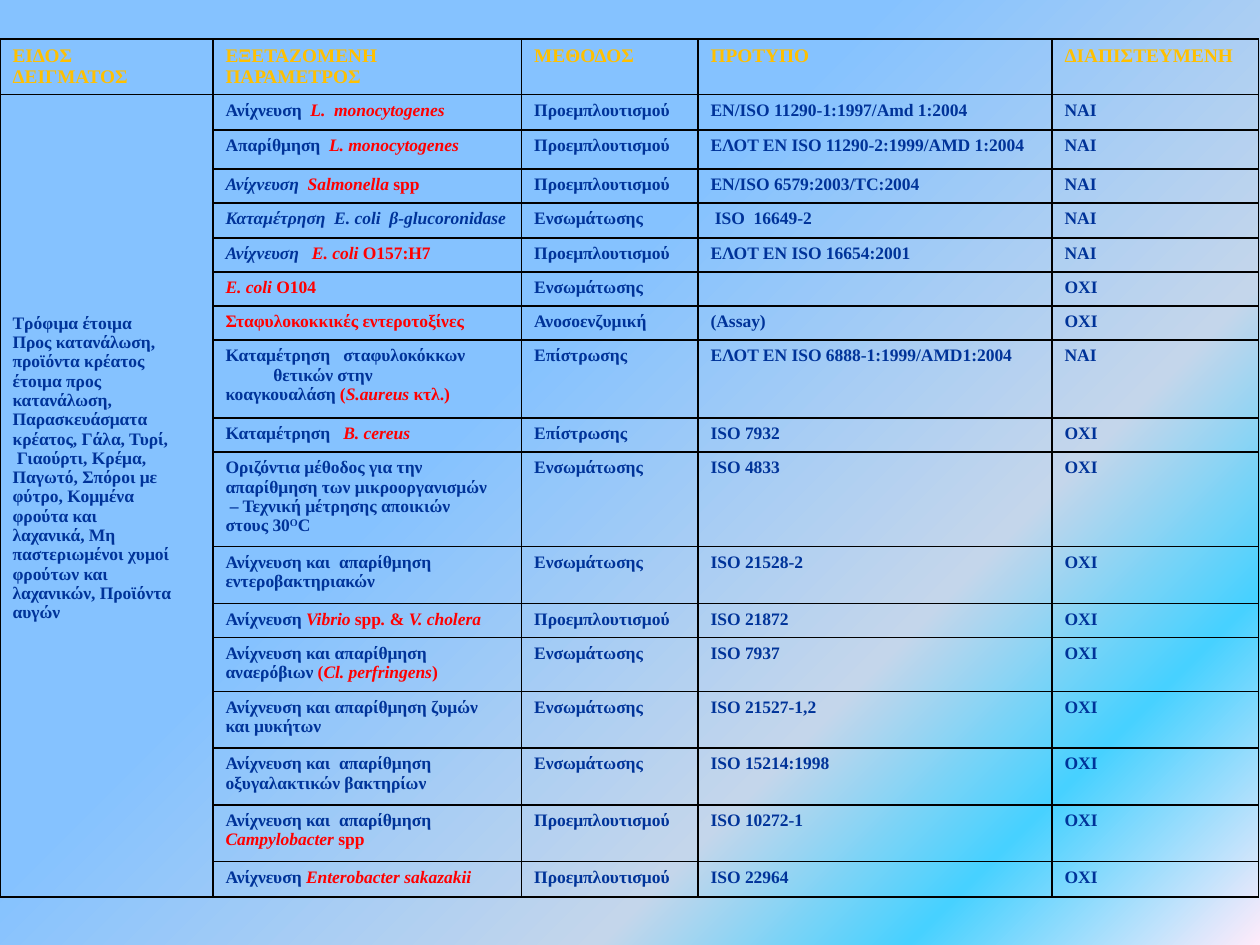
from collections import namedtuple
from functools import partial

from lxml.etree import SubElement
from pptx import Presentation
from pptx.dml.color import RGBColor
from pptx.oxml.ns import qn
from pptx.util import Inches, Pt

COLORS = {"header": "FFC000", "body": "003399", "germ": "FF0000", "border": "000000"}
SKY = [(40, "85C2FF"), (70, "C4D6EB"), (84, "47D1FF"), (100, "FFEBFA")]

Run = namedtuple("Run", "text color italic raised", defaults=("body", False, False))
italic = partial(Run, italic=True)
red = partial(Run, color="germ")
germ = partial(Run, color="germ", italic=True)

ENRICHMENT, POUR, SPREAD = "Προεμπλουτισμού", "Ενσωμάτωσης", "Επίστρωσης"
YES, NO = "ΝΑΙ", "ΟΧΙ"
DETECT = "Ανίχνευση και  απαρίθμηση"

HEADERS = [
    ["ΕΙΔΟΣ", "ΔΕΙΓΜΑΤΟΣ"],
    ["ΕΞΕΤΑΖΟΜΕΝΗ", "ΠΑΡΑΜΕΤΡΟΣ"],
    ["ΜΕΘΟΔΟΣ"],
    ["ΠΡΟΤΥΠΟ"],
    ["ΔΙΑΠΙΣΤΕΥΜΕΝΗ"],
]

SAMPLES = [
    "Τρόφιμα έτοιμα", "Προς κατανάλωση,", "προϊόντα κρέατος", "έτοιμα προς",
    "κατανάλωση,", "Παρασκευάσματα", "κρέατος, Γάλα, Τυρί,", " Γιαούρτι, Κρέμα,",
    "Παγωτό, Σπόροι με", "φύτρο, Κομμένα", "φρούτα και", "λαχανικά, Μη",
    "παστεριωμένοι χυμοί", "φρούτων και", "λαχανικών, Προϊόντα", "αυγών",
]

TESTS = [
    (0.28, [[Run("Ανίχνευση  "), germ("L.  monocytogenes")]],
     ENRICHMENT, "EN/ISO 11290-1:1997/Amd 1:2004", YES),
    (0.31, [[Run("Απαρίθμηση  "), germ("L. monocytogenes")]],
     ENRICHMENT, "ΕΛΟΤ ΕΝ ISO 11290-2:1999/AMD 1:2004", YES),
    (0.27, [[italic("Ανίχνευση  "), germ("Salmonella "), red("spp")]],
     ENRICHMENT, "EN/ISO 6579:2003/TC:2004", YES),
    (0.28, [[italic("Καταμέτρηση  E. coli  β-glucoronidase")]],
     POUR, " ISO  16649-2", YES),
    (0.27, [[italic("Ανίχνευση "), germ("  Ε. coli"), red(" O157:H7")]],
     ENRICHMENT, "ΕΛΟΤ ΕΝ ISO 16654:2001", YES),
    (0.27, [[germ("Ε. coli"), red(" O104")]], POUR, "", NO),
    (0.27, [[red("Σταφυλοκοκκικές εντεροτοξίνες")]], "Ανοσοενζυμική", "(Assay)", NO),
    (0.62, [["Καταμέτρηση   σταφυλοκόκκων θετικών στην"],
            [Run("κοαγκουαλάση "), red("("), germ("S.aureus"), red(" κτλ.)")]],
     SPREAD, "ΕΛΟΤ ΕΝ ISO 6888-1:1999/AMD1:2004", YES),
    (0.27, [[Run("Καταμέτρηση   "), germ("B. cereus")]], SPREAD, "ISO 7932", NO),
    (0.75, [["Οριζόντια μέθοδος για την"], ["απαρίθμηση των μικροοργανισμών"],
            [" – Τεχνική μέτρησης αποικιών"],
            [Run("στους 30"), Run("O", raised=True), Run("C")]],
     POUR, "ISO 4833", NO),
    (0.45, [[DETECT], ["εντεροβακτηριακών"]], POUR, "ISO 21528-2", NO),
    (0.27, [[Run("Ανίχνευση "), germ("Vibrio "), red("spp"), germ("."), red(" & "),
             germ("V. cholera")]],
     ENRICHMENT, "ISO 21872", NO),
    (0.43, [["Ανίχνευση και απαρίθμηση"],
            [Run("αναερόβιων "), red("("), germ("Cl. perfringens"), red(")")]],
     POUR, "ISO 7937", NO),
    (0.45, [["Ανίχνευση και απαρίθμηση ζυμών"], ["και μυκήτων"]],
     POUR, "ISO 21527-1,2", NO),
    (0.45, [[DETECT], ["οξυγαλακτικών βακτηρίων"]], POUR, "ISO 15214:1998", NO),
    (0.45, [[DETECT], [germ("Campylobacter "), red("spp")]],
     ENRICHMENT, "ISO 10272-1", NO),
    (0.28, [[Run("Ανίχνευση "), germ("Enterobacter sakazakii")]],
     ENRICHMENT, "ISO 22964", NO),
]


class SlideBuilder:
    font = "Times New Roman"
    hanging = Inches(0.38)

    def __init__(self, slide):
        self.slide = slide

    def background(self, stops, angle):
        self.slide.background.fill.gradient()
        gradient = self.slide._element.find(".//" + qn("a:gradFill"))
        stop_list = gradient.find(qn("a:gsLst"))
        for old_stop in list(stop_list):
            stop_list.remove(old_stop)
        for position, color in stops:
            stop = SubElement(stop_list, qn("a:gs"), pos=str(position * 1000))
            SubElement(stop, qn("a:srgbClr"), val=color)
        gradient.find(qn("a:lin")).set("ang", str(angle * 60000))

    def table(self, left, top, widths, heights):
        frame = self.slide.shapes.add_table(
            len(heights), len(widths), Inches(left), Inches(top),
            Inches(sum(widths)), Inches(sum(heights)))
        table = frame.table
        table.first_row = table.horz_banding = False
        for column, width in zip(table.columns, widths):
            column.width = Inches(width)
        for row, height in zip(table.rows, heights):
            row.height = Inches(height)
        for cell in table.iter_cells():
            self.borders(cell)
            cell.fill.background()
        return table

    def borders(self, cell):
        properties = cell._tc.get_or_add_tcPr()
        for side in ("lnL", "lnR", "lnT", "lnB"):
            line = SubElement(properties, qn("a:" + side), w=str(Pt(1)))
            fill = SubElement(line, qn("a:solidFill"))
            SubElement(fill, qn("a:srgbClr"), val=COLORS["border"])

    def text(self, cell, lines, size=10):
        frame = cell.text_frame
        for number, runs in enumerate(lines):
            paragraph = frame.add_paragraph() if number else frame.paragraphs[0]
            layout = paragraph._p.get_or_add_pPr()
            layout.set("marL", str(self.hanging))
            layout.set("indent", str(-self.hanging))
            for part in runs:
                self.run(paragraph, Run(part) if isinstance(part, str) else part, size)
            if not runs:
                SubElement(paragraph._p, qn("a:endParaRPr"), sz=str(size * 100))

    def run(self, paragraph, part, size):
        run = paragraph.add_run()
        run.text = part.text
        font = run.font
        font.name, font.size, font.bold = self.font, Pt(size), True
        font.italic = part.italic
        font.color.rgb = RGBColor.from_string(COLORS[part.color])
        if part.raised:
            run._r.get_or_add_rPr().set("baseline", "30000")


def main():
    deck = Presentation()
    deck.slide_width, deck.slide_height = Inches(10), Inches(7.5)
    builder = SlideBuilder(deck.slides.add_slide(deck.slide_layouts[6]))
    builder.background(SKY, 45)

    heights = [0.44] + [test[0] for test in TESTS]
    table = builder.table(0, 0.31, [1.69, 2.45, 1.4, 2.81, 1.64], heights)
    for column, lines in enumerate(HEADERS):
        builder.text(table.cell(0, column), [[Run(line, "header")] for line in lines], 11)

    samples = table.cell(1, 0)
    samples.merge(table.cell(len(TESTS), 0))
    samples.margin_top = Inches(1.74)
    builder.text(samples, [[line] for line in SAMPLES])

    for row, (_, parameter, *details) in enumerate(TESTS, 1):
        if row > 1:
            builder.text(table.cell(row, 0), [[]])
        builder.text(table.cell(row, 1), parameter)
        for column, detail in enumerate(details, 2):
            builder.text(table.cell(row, column), [[detail] if detail else []])

    deck.save("out.pptx")


if __name__ == "__main__":
    main()
